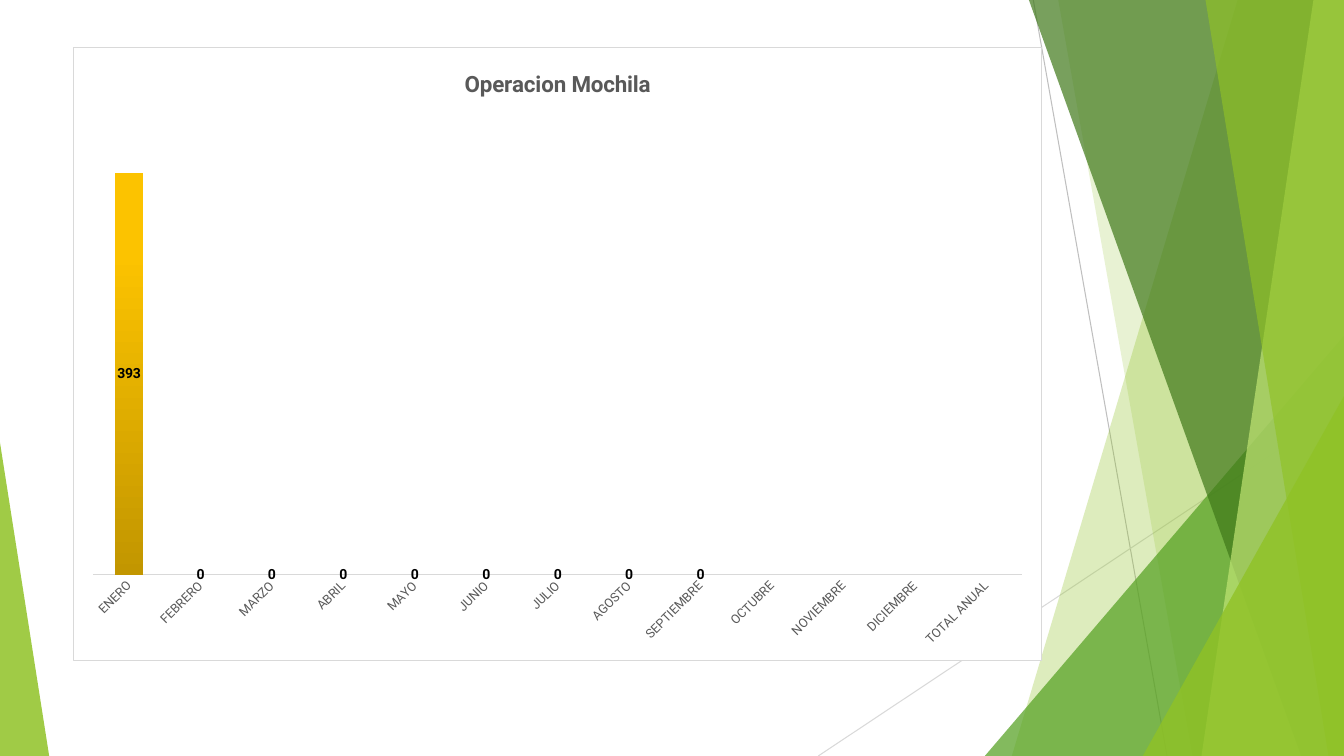
import pptx
import pptx.chart.data
import pptx.dml.color
import pptx.enum.chart
import pptx.enum.shapes
import pptx.oxml
import pptx.oxml.ns
import pptx.util
from dataclasses import dataclass

Cm = pptx.util.Cm
Pt = pptx.util.Pt
qn = pptx.oxml.ns.qn
NS = pptx.oxml.ns.nsdecls("a", "c")
W, H = 33.87, 19.05


@dataclass(frozen=True)
class Theme:
    font: str = "Roboto"
    white: str = "FFFFFF"
    black: str = "000000"
    text: str = "595959"
    rule: str = "D9D9D9"
    dark_rule: str = "BFBFBF"
    lime: str = "90C226"
    pale: str = "C0E474"
    green: str = "54A021"
    forest: str = "3F7819"
    bar: tuple = ((0, "C29600"), (80, "FCC300"), (100, "FDC400"))
    title_size: int = 16
    label_size: int = 10
    axis_size: int = 9
    line_width: float = 0.75


def rgb(value):
    return pptx.dml.color.RGBColor.from_string(value)


class Slide:
    def __init__(self, prs, theme):
        self.theme = theme
        self.s = prs.slides.add_slide(prs.slide_layouts[6])
        self.s.background.fill.solid()
        self.s.background.fill.fore_color.rgb = rgb(theme.white)

    def paint(self, sp, color, opacity):
        sp.shadow.inherit = False
        sp.line.fill.background()
        sp.fill.solid()
        sp.fill.fore_color.rgb = rgb(color)
        clr = sp._element.spPr.find(qn("a:solidFill"))[0]
        clr.append(pptx.oxml.parse_xml(f'<a:alpha {NS} val="{opacity * 1000}"/>'))

    def line(self, x1, y1, x2, y2, color):
        cn = self.s.shapes.add_connector(
            pptx.enum.shapes.MSO_CONNECTOR.STRAIGHT, Cm(x1), Cm(y1), Cm(x2), Cm(y2))
        cn.line.color.rgb = rgb(color)
        cn.line.width = Pt(self.theme.line_width)
        cn._element.spPr.append(pptx.oxml.parse_xml(f"<a:effectLst {NS}/>"))

    def band(self, top_x, bottom_x, color, opacity):
        fb = self.s.shapes.build_freeform(Cm(top_x), 0)
        fb.add_line_segments([(Cm(W), 0), (Cm(W), Cm(H)), (Cm(bottom_x), Cm(H))])
        self.paint(fb.convert_to_shape(), color, opacity)

    def corner(self, x, width, height, apex, color, opacity):
        sp = self.s.shapes.add_shape(
            pptx.enum.shapes.MSO_SHAPE.ISOSCELES_TRIANGLE,
            Cm(x), Cm(H - height), Cm(width), Cm(height))
        sp.adjustments[0] = apex
        self.paint(sp, color, opacity)

    def style(self, font, size, color, bold=False):
        font.name = self.theme.font
        font.size = Pt(size)
        font.bold = bold
        font.color.rgb = rgb(color)

    def chart(self, title, cats, vals, x, y, w, h):
        t = self.theme
        data = pptx.chart.data.CategoryChartData()
        data.categories = cats
        data.add_series("Series 1", vals)
        chart = self.s.shapes.add_chart(
            pptx.enum.chart.XL_CHART_TYPE.COLUMN_STACKED,
            Cm(x), Cm(y), Cm(w), Cm(h), data).chart
        chart.has_legend = False
        self.style(chart.font, t.label_size, t.black)
        tf = chart.chart_title.text_frame
        tf.text = title
        self.style(tf.paragraphs[0].runs[0].font, t.title_size, t.text, True)

        ax = chart.value_axis
        ax.minimum_scale, ax.maximum_scale = 0, 450
        ax.has_major_gridlines = False
        ax.visible = False
        ax = chart.category_axis
        ax.major_tick_mark = pptx.enum.chart.XL_TICK_MARK.NONE
        ax.format.line.color.rgb = rgb(t.rule)
        ax.format.line.width = Pt(1)
        self.style(ax.tick_labels.font, t.axis_size, t.text)
        ax._element.find(qn("c:txPr")).find(qn("a:bodyPr")).set("rot", "-2700000")

        plot = chart.plots[0]
        plot.vary_by_categories = False
        plot.overlap, plot.gap_width = 100, 150
        ser = plot.series[0]
        dl = ser.data_labels
        dl.show_value = True
        dl.position = pptx.enum.chart.XL_LABEL_POSITION.CENTER
        self.style(dl.font, t.label_size, t.black, True)
        ser.format.fill.background()
        spPr = ser._element.find(qn("c:spPr"))
        stops = "".join(f'<a:gs pos="{p * 1000}"><a:srgbClr val="{c}"/></a:gs>' for p, c in t.bar)
        spPr.replace(spPr.find(qn("a:noFill")), pptx.oxml.parse_xml(
            f'<a:gradFill {NS}><a:gsLst>{stops}</a:gsLst><a:lin ang="16200000" scaled="0"/></a:gradFill>'))
        self.frame(chart)

    def frame(self, chart):
        t = self.theme
        root = chart._chartSpace.find(qn("c:chart"))
        root.addnext(pptx.oxml.parse_xml(
            f'<c:spPr {NS}><a:solidFill><a:srgbClr val="{t.white}"/></a:solidFill>'
            f'<a:ln w="{Pt(t.line_width)}"><a:solidFill><a:srgbClr val="{t.rule}"/></a:solidFill></a:ln></c:spPr>'))
        area = root.find(qn("c:plotArea"))
        for old in area.findall(qn("c:layout")):
            area.remove(old)
        box = "".join(f'<c:{k} val="{v}"/>' for k, v in
                      (("x", 0.02), ("y", 0.11), ("w", 0.96), ("h", 0.75)))
        area.insert(0, pptx.oxml.parse_xml(
            f'<c:layout {NS}><c:manualLayout><c:layoutTarget val="inner"/>'
            f'<c:xMode val="edge"/><c:yMode val="edge"/>{box}</c:manualLayout></c:layout>'))


def main():
    prs = pptx.Presentation()
    prs.slide_width, prs.slide_height = Cm(W), Cm(H)
    t = Theme()
    s = Slide(prs, t)
    s.line(26.04, 0, 29.41, H, t.dark_rule)
    s.line(W, 10.24, 20.62, H, t.rule)
    s.band(31.19, 25.5, t.lime, 30)
    s.band(26.67, 30.05, t.lime, 20)
    s.corner(24.82, 9.05, 10.59, 1, t.green, 72)
    s.band(25.93, 32.79, t.forest, 70)
    s.band(33.1, 30.28, t.pale, 70)
    s.band(30.38, 33.48, t.lime, 65)
    s.corner(28.8, 5.07, 9.07, 1, t.lime, 80)
    s.corner(0, 1.24, 7.9, 0, t.lime, 85)
    months = ["ENERO", "FEBRERO", "MARZO", "ABRIL", "MAYO", "JUNIO", "JULIO", "AGOSTO",
              "SEPTIEMBRE", "OCTUBRE", "NOVIEMBRE", "DICIEMBRE"]
    s.chart("Operacion Mochila", months + ["TOTAL ANUAL"],
            [393] + [0] * 8 + [None] * 4, 1.85, 1.19, 24.41, 15.47)
    prs.save("out.pptx")


if __name__ == "__main__":
    main()
